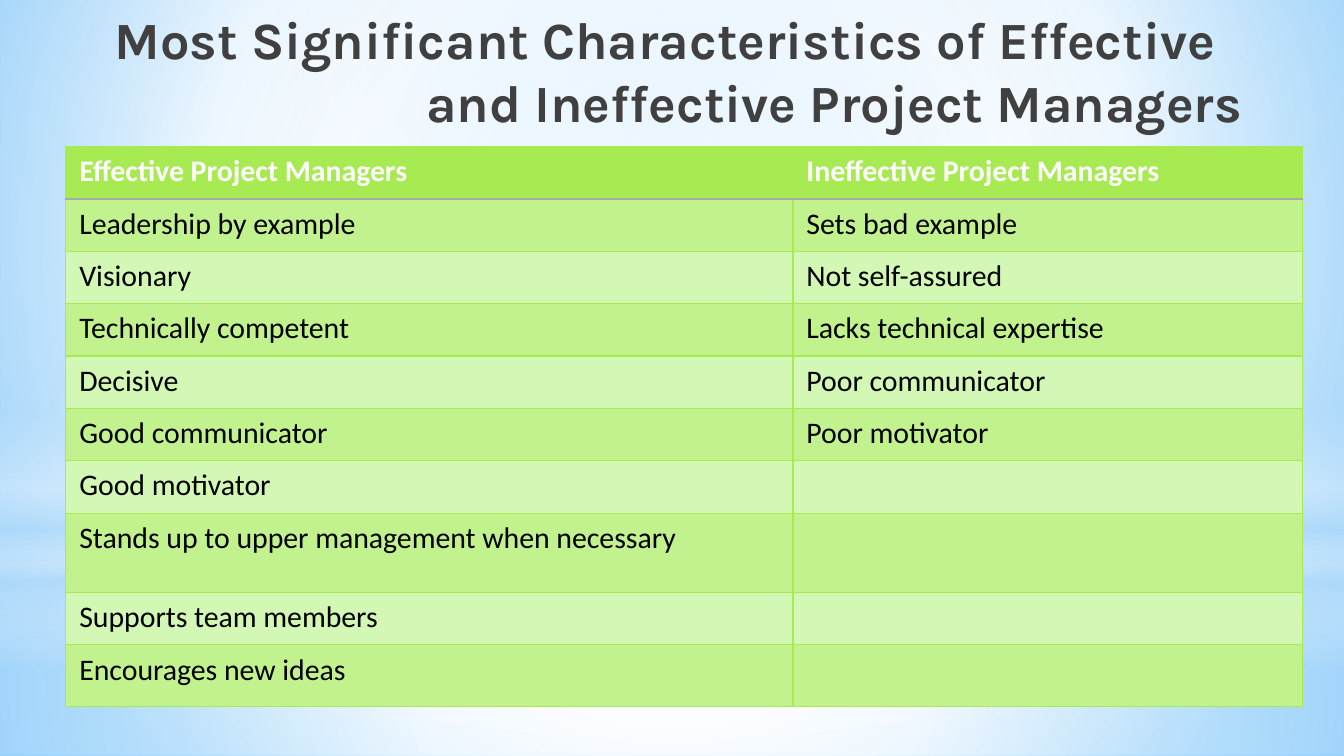
from pptx import Presentation
from pptx.dml.color import RGBColor
from pptx.enum.shapes import MSO_SHAPE
from pptx.enum.text import MSO_ANCHOR, PP_ALIGN
from pptx.oxml import parse_xml
from pptx.oxml.ns import nsdecls, qn
from pptx.util import Inches, Pt

WIDTH = 10
HEIGHT = WIDTH * 9 / 16
WHITE = RGBColor(0xFF, 0xFF, 0xFF)
BLACK = RGBColor(0x00, 0x00, 0x00)
CHARCOAL = RGBColor(0x40, 0x40, 0x40)
GRAY = RGBColor(0xA9, 0xA9, 0xA9)
GREEN = RGBColor(0xA7, 0xEA, 0x52)
MID_GREEN = RGBColor(0xC2, 0xF2, 0x8D)
PALE_GREEN = RGBColor(0xD3, 0xF7, 0xB5)
SKY = RGBColor(0x9E, 0xD5, 0xFF)
BLUE = RGBColor(0x5B, 0xB9, 0xFF)
MIST = RGBColor(0xB4, 0xDC, 0xFA)

CENTER = (50, 50, 50, 50)
TITLE = ("Most Significant Characteristics of Effective",
         "and Ineffective Project Managers")
TITLE_RIGHT_INDENTS = (0.2, 0)
ROWS = (
    ("Effective Project Managers", "Ineffective Project Managers"),
    ("Leadership by example", "Sets bad example"),
    ("Visionary", "Not self-assured"),
    ("Technically competent", "Lacks technical expertise"),
    ("Decisive", "Poor communicator"),
    ("Good communicator", "Poor motivator"),
    ("Good motivator", ""),
    ("Stands up to upper management when necessary", ""),
    ("Supports team members", ""),
    ("Encourages new ideas", ""),
)
COLUMN_WIDTHS = (5.41, 3.79)
ROW_HEIGHT = 0.39
TALL_ROWS = {7: 0.59, 9: 0.46}
TABLE_TEXT_SIZE = 16


def set_gradient(element, stops, focus=None):
    """Swap the first solid fill for (position, colour, opacity) stops.

    A focus rectangle makes the gradient circular; without one it runs down.
    """
    stop_xml = "".join(
        f'<a:gs pos="{position * 1000}"><a:srgbClr val="{color}">'
        f'<a:alpha val="{opacity * 1000}"/></a:srgbClr></a:gs>'
        for position, color, opacity in stops)
    if focus:
        sides = " ".join(f'{side}="{share * 1000}"'
                         for side, share in zip("ltrb", focus))
        direction = f'<a:path path="circle"><a:fillToRect {sides}/></a:path>'
    else:
        direction = '<a:lin ang="5400000" scaled="0"/>'
    solid = next(element.iter(qn("a:solidFill")))
    solid.getparent().replace(solid, parse_xml(
        f'<a:gradFill {nsdecls("a")} rotWithShape="1">'
        f'<a:gsLst>{stop_xml}</a:gsLst>{direction}</a:gradFill>'))


def add_glow(page, kind, top, height, stops, focus=None):
    """Add a full-width translucent shape."""
    glow = page.shapes.add_shape(
        kind, 0, Inches(top), Inches(WIDTH), Inches(height))
    glow.shadow.inherit = False
    glow.line.fill.background()
    glow.fill.solid()
    set_gradient(glow.element, stops, focus)


def add_backdrop(page):
    page.background.fill.solid()
    set_gradient(page.element,
                 [(0, SKY, 100), (60, WHITE, 100), (100, BLUE, 100)],
                 (20, 10, 20, 60))
    horizon = 4.19
    add_glow(page, MSO_SHAPE.RECTANGLE, horizon, HEIGHT - horizon,
             [(0, WHITE, 91), (37, WHITE, 76), (100, MIST, 79)], CENTER)
    add_glow(page, MSO_SHAPE.RECTANGLE, 0, horizon,
             [(0, WHITE, 89), (48, WHITE, 62), (100, MIST, 79)], CENTER)
    add_glow(page, MSO_SHAPE.RECTANGLE, 3.09, 1.88,
             [(0, WHITE, 0), (29, WHITE, 30), (45, MIST, 40),
              (55, WHITE, 26), (65, MIST, 60), (100, WHITE, 0)])
    add_glow(page, MSO_SHAPE.OVAL, 1.31, 4.19,
             [(0, WHITE, 100), (56, WHITE, 0)], CENTER)


def write_text(para, text, *, font, size, color, bold=False,
               align=PP_ALIGN.LEFT):
    para.alignment = align
    span = para.add_run()
    span.text = text
    span.font.name = font
    span.font.size = Pt(size)
    span.font.bold = bold
    span.font.color.rgb = color


def add_title(page):
    box = page.shapes.add_textbox(
        Inches(0.16), Inches(0.46), Inches(9.18), Inches(0.63))
    frame = box.text_frame
    frame.word_wrap = True
    frame.vertical_anchor = MSO_ANCHOR.BOTTOM
    frame.margin_left = frame.margin_right = Inches(0.1)
    frame.margin_top = frame.margin_bottom = Inches(0.1)
    for index, (line, indent) in enumerate(zip(TITLE, TITLE_RIGHT_INDENTS)):
        para = frame.add_paragraph() if index else frame.paragraphs[0]
        write_text(para, line, font="Karla", size=28, color=CHARCOAL,
                   bold=True, align=PP_ALIGN.RIGHT)
        para._p.get_or_add_pPr().set("marR", str(Inches(indent)))


def set_border(cell, side, color, width):
    border = parse_xml(
        f'<a:{side} {nsdecls("a")} w="{Pt(width)}"><a:solidFill>'
        f'<a:srgbClr val="{color}"/></a:solidFill></a:{side}>')
    properties = cell._tc.get_or_add_tcPr()
    properties.insert(len(properties.findall("*")) - 1, border)


def format_cell(cell, text, row):
    is_header = row == 0
    cell.fill.solid()
    cell.fill.fore_color.rgb = (
        GREEN if is_header else MID_GREEN if row % 2 else PALE_GREEN)
    for side in ("lnL", "lnR", "lnT", "lnB"):
        under_header = (row, side) in ((0, "lnB"), (1, "lnT"))
        set_border(cell, side, GRAY if under_header else GREEN,
                   1.25 if under_header else 0.75)
    para = cell.text_frame.paragraphs[0]
    if text:
        write_text(para, text, font="Calibri", size=TABLE_TEXT_SIZE,
                   color=WHITE if is_header else BLACK, bold=is_header)
    else:
        end_format = parse_xml(
            f'<a:endParaRPr {nsdecls("a")} sz="{TABLE_TEXT_SIZE * 100}"/>')
        para._p.append(end_format)


def add_comparison_table(page):
    heights = [TALL_ROWS.get(row, ROW_HEIGHT) for row in range(len(ROWS))]
    table = page.shapes.add_table(
        len(ROWS), len(COLUMN_WIDTHS), Inches(0.49), Inches(1.09),
        Inches(sum(COLUMN_WIDTHS)), Inches(sum(heights))).table
    for column, width in zip(table.columns, COLUMN_WIDTHS):
        column.width = Inches(width)
    for row, (texts, height) in enumerate(zip(ROWS, heights)):
        table.rows[row].height = Inches(height)
        for column, text in enumerate(texts):
            format_cell(table.cell(row, column), text, row)


def main():
    deck = Presentation()
    deck.slide_width, deck.slide_height = Inches(WIDTH), Inches(HEIGHT)
    page = deck.slides.add_slide(deck.slide_layouts[6])
    add_backdrop(page)
    add_title(page)
    add_comparison_table(page)
    deck.save("out.pptx")


if __name__ == "__main__":
    main()
